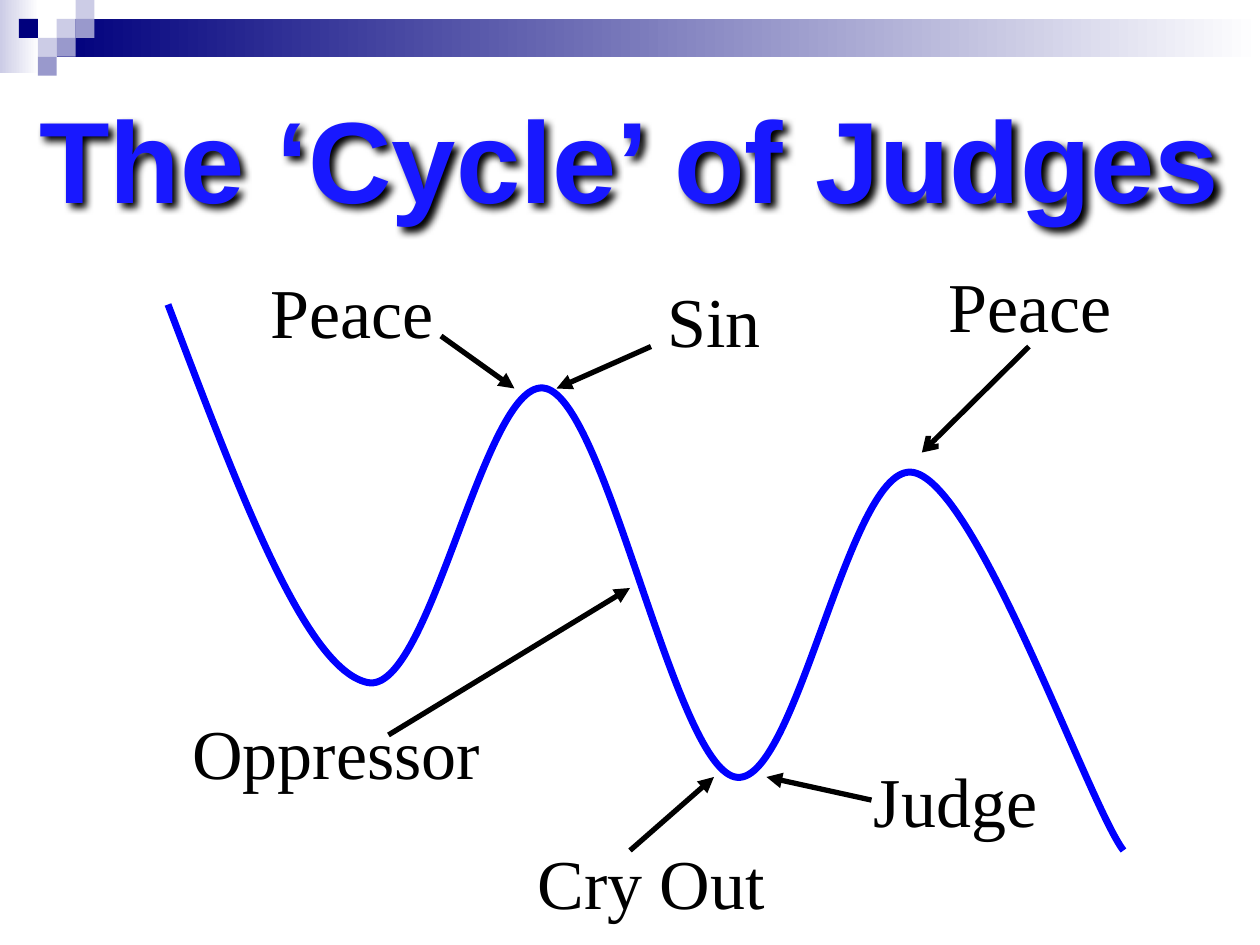
from typing import NamedTuple

from lxml.etree import SubElement as Sub
from pptx import Presentation
from pptx.dml.color import RGBColor as Rgb
from pptx.enum.shapes import MSO_CONNECTOR as Link, MSO_SHAPE as Shape
from pptx.enum.text import MSO_ANCHOR as Anchor, MSO_AUTO_SIZE as Fit, PP_ALIGN as Align
from pptx.oxml.ns import qn
from pptx.util import Inches, Pt

COLS, ROWS = 120, 90  # twelve cells to the inch
TILE = 1.8  # side of a corner square, in cells
HEX = {"navy": "00007D", "mid": "9999CC", "pale": "CCCCE6", "white": "FFFFFF",
       "title": "1818FF", "curve": "0000FF", "ink": "000000"}


class Tile(NamedTuple):
    col: int
    row: int
    tone: str


class Stage(NamedTuple):
    text: str
    box: tuple[float, float, float]  # left, top, width
    start: tuple[float, float]
    end: tuple[float, float]
    head: str = "triangle"
    group: bool = True


TILES = [
    Tile(3, 1, "pale"), Tile(4, 0, "pale"), Tile(4, 1, "mid"), Tile(2, 2, "pale"),
    Tile(1, 1, "navy"), Tile(3, 2, "mid"), Tile(2, 3, "mid"),
]
STAGES = [
    Stage("Peace", (23, 25, 21), (42, 32), (49, 37)),
    Stage("Sin", (60, 25.8, 16), (62, 33), (53, 37)),
    Stage("Oppressor", (16, 67, 32), (37, 70), (60, 56)),
    Stage("Cry Out", (46, 79.4, 32), (60, 81), (68, 74)),
    Stage("Judge", (75, 71.6, 32), (83, 76.2), (73, 74)),
    Stage("Peace", (87.6, 24.4, 21), (98, 33), (87.8, 43.1), "arrow", False),
]
# Start point, then two handles and an end for each bend
WAVE = [
    (16, 29),
    (22.6, 46.3), (29, 63.7), (35, 65),
    (41, 66.3), (46.2, 35.5), (52, 37),
    (57.8, 38.5), (64.2, 72.7), (70, 74),
    (75.8, 75.3), (80.9, 43.8), (87, 45),
    (93.1, 46.2), (103.7, 76.7), (107, 81),
]


def cells(*vals: float) -> list[int]:
    return [Inches(v / 12) for v in vals]


def tint(name: str) -> Rgb:
    return Rgb.from_string(HEX[name])


def style(par, font: str, size: int, tone: str, bold: bool = False) -> None:
    par.alignment = Align.CENTER
    face = par.runs[0].font
    face.name, face.size, face.bold = font, Pt(size), bold
    face.color.rgb = tint(tone)


def block(shapes, box: tuple, tone: str, fade: bool = False) -> None:
    rect = shapes.add_shape(Shape.RECTANGLE, *cells(*box))
    rect.shadow.inherit = False
    rect.line.fill.background()
    if fade:
        rect.fill.gradient()
        rect.fill.gradient_angle = 0
        for stop, name in zip(rect.fill.gradient_stops, (tone, "white")):
            stop.color.rgb = tint(name)
    else:
        rect.fill.solid()
        rect.fill.fore_color.rgb = tint(tone)


def head(title) -> None:
    title.left, title.top, title.width, title.height = cells(0, 6, COLS, 18)
    frame = title.text_frame
    frame.text = "The ‘Cycle’ of Judges"
    frame.vertical_anchor, frame.auto_size = Anchor.MIDDLE, Fit.NONE
    style(frame.paragraphs[0], "Arial", 66, "title", True)
    # Soft shadow behind the letters
    list_ = Sub(title._element.spPr, qn("a:effectLst"))
    soft = Sub(list_, qn("a:outerShdw"), blurRad="50800", dist="38100",
               dir="2700000", algn="tl", rotWithShape="0")
    Sub(soft, qn("a:srgbClr"), val=HEX["ink"])


def wave(shapes) -> None:
    pts = [cells(*pt) for pt in WAVE]
    pen = shapes.build_freeform(*pts[0])
    pen.add_line_segments(pts[1:], close=False)
    curve = pen.convert_to_shape()
    curve.shadow.inherit = False
    curve.fill.background()
    curve.line.color.rgb, curve.line.width = tint("curve"), Pt(4)
    # Join each three straight steps into one cubic bend
    track = next(curve._element.iter(qn("a:path")))
    steps = track.findall(qn("a:lnTo"))
    for i in range(0, len(steps), 3):
        bend = Sub(track, qn("a:cubicBezTo"))
        for step in steps[i:i + 3]:
            bend.append(step[0])
            track.remove(step)


def arrow(shapes, item: Stage) -> None:
    link = shapes.add_connector(Link.STRAIGHT, *cells(*item.start, *item.end))
    link.line.color.rgb, link.line.width = tint("ink"), Pt(3)
    Sub(link.line._get_or_add_ln(), qn("a:tailEnd"), type=item.head)
    Sub(link._element.spPr, qn("a:effectLst"))


def stage(shapes, item: Stage) -> None:
    home = shapes.add_group_shape().shapes if item.group else shapes
    box = home.add_textbox(*cells(*item.box, 9.2))
    frame = box.text_frame
    frame.text, frame.word_wrap = item.text, True
    frame.auto_size = Fit.SHAPE_TO_FIT_TEXT
    par = frame.paragraphs[0]
    style(par, "Times New Roman", 40, "ink")
    gap = Sub(par._p.get_or_add_pPr(), qn("a:spcBef"))
    Sub(gap, qn("a:spcPct"), val="50000")
    arrow(home, item)


def main() -> None:
    deck = Presentation()
    deck.slide_width, deck.slide_height = cells(COLS, ROWS)
    slide = deck.slides.add_slide(deck.slide_layouts[5])
    shapes = slide.shapes

    # Banner and corner squares
    block(shapes, (0, 0, 3.7, 7), "pale", True)
    block(shapes, (3 * TILE, TILE, COLS - 3 * TILE, 2 * TILE), "navy", True)
    for tile in TILES:
        block(shapes, (tile.col * TILE, tile.row * TILE, TILE, TILE), tile.tone)

    # Title, curve and its stages
    head(shapes.title)
    wave(shapes)
    for item in STAGES:
        stage(shapes, item)
    deck.save("out.pptx")


if __name__ == "__main__":
    main()
